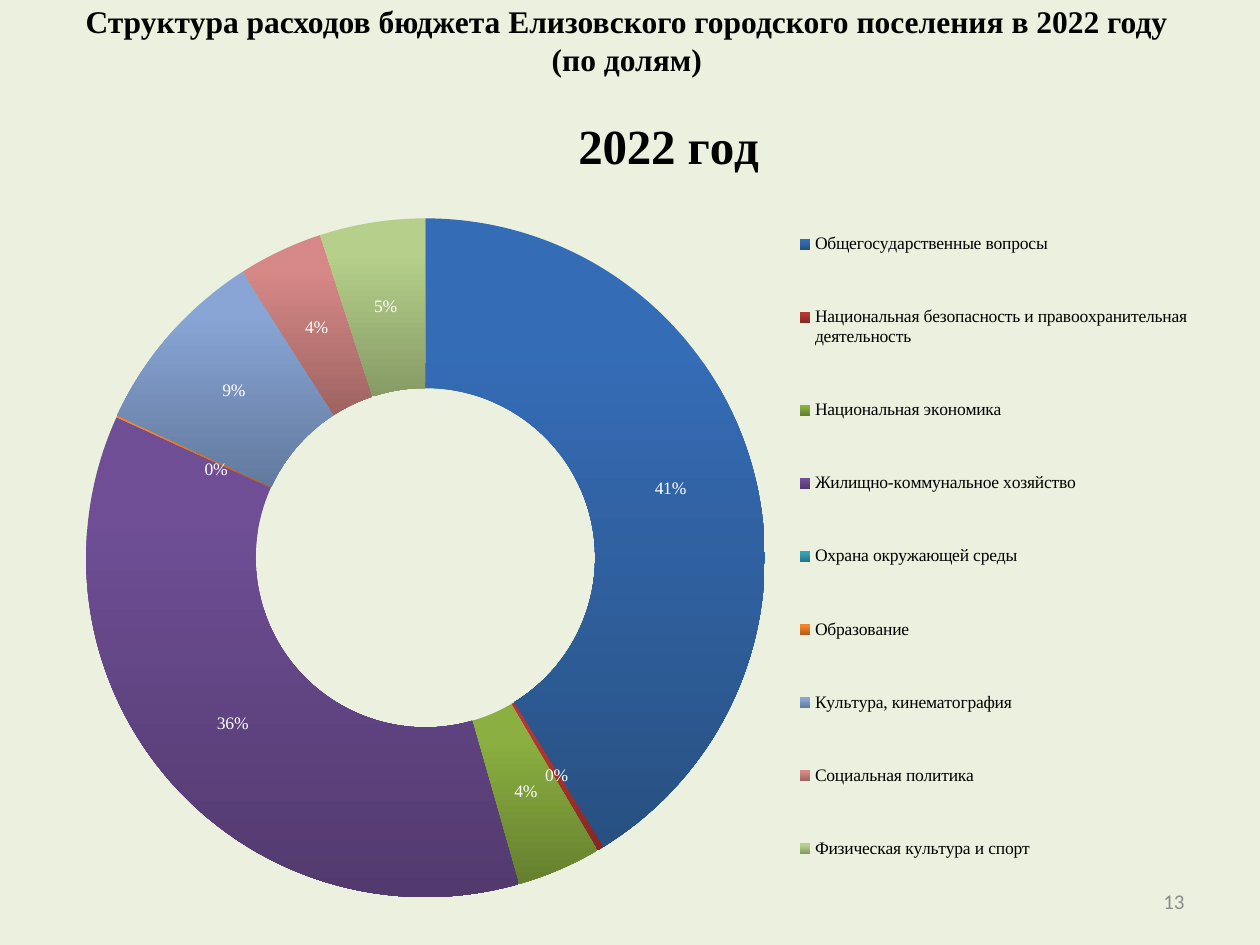
from copy import deepcopy

from lxml import etree
from pptx import Presentation
from pptx.chart.data import CategoryChartData
from pptx.dml.color import RGBColor
from pptx.enum.chart import XL_CHART_TYPE, XL_LEGEND_POSITION
from pptx.enum.text import MSO_ANCHOR, PP_ALIGN
from pptx.oxml.ns import qn
from pptx.util import Inches, Pt

TITLE = "Структура расходов бюджета Елизовского городского поселения в 2022 году\v (по долям) "
CHART_TITLE = "2022 год"
PAGE = "13"
COLORS = {"bg": "EBF1DE", "text": "000000", "label": "FFFFFF", "page": "8C8C8C"}
SERIF = "Times New Roman"
# name, share in percent, upper and lower gradient colour
EXPENSES = [
    ("Общегосударственные вопросы", 41, "356CB6", "285182"),
    ("Национальная безопасность и правоохранительная деятельность", 0.3, "B63633", "842826"),
    ("Национальная экономика", 4, "8BAF40", "65802E"),
    ("Жилищно-коммунальное хозяйство", 36, "6F4E96", "523A6E"),
    ("Охрана окружающей среды", 0, "34A2BC", "277588"),
    ("Образование", 0.1, "F58428", "B35E1A"),
    ("Культура, кинематография", 9, "88A5D5", "637A9E"),
    ("Социальная политика", 4, "D68886", "9E6462"),
    ("Физическая культура и спорт", 5, "B6D08B", "869B66"),
]
EDUCATION = 5


def style(font, **values):
    color = values.pop("color", "text")
    for name, value in values.items():
        setattr(font, name, value)
    font.color.rgb = RGBColor.from_string(COLORS[color])


def set_text(sp, text, align, **values):
    tf = sp.text_frame
    tf.word_wrap = True
    tf.vertical_anchor = MSO_ANCHOR.MIDDLE
    p = tf.paragraphs[0]
    p.text = text
    p.alignment = align
    for r in p.runs:
        style(r.font, **values)


def place(parent, index, **values):
    """Give a chart part a manual layout, in fractions of the chart area."""
    for old in parent.findall(qn("c:layout")):
        parent.remove(old)
    layout = etree.Element(qn("c:layout"))
    manual = etree.SubElement(layout, qn("c:manualLayout"))
    if parent.tag != qn("c:dLbl"):
        values = {"xMode": "edge", "yMode": "edge", **values}
    if parent.tag == qn("c:plotArea"):
        values = {"layoutTarget": "inner", **values}
    for name, value in values.items():
        etree.SubElement(manual, qn(f"c:{name}")).set("val", str(value))
    parent.insert(index, layout)


def add_doughnut(s):
    data = CategoryChartData()
    data.categories = [name for name, *_ in EXPENSES]
    data.add_series(CHART_TITLE, [share for _, share, *_ in EXPENSES])
    chart = s.shapes.add_chart(XL_CHART_TYPE.DOUGHNUT, Inches(0.16), Inches(0.75),
                               Inches(9.69), Inches(6.52), data).chart
    style(chart.font, name=SERIF, size=Pt(10))

    chart.has_title = True
    tf = chart.chart_title.text_frame
    tf.text = CHART_TITLE
    style(tf.paragraphs[0].runs[0].font, name=SERIF, size=Pt(28), bold=True)
    chart.has_legend = True
    chart.legend.position = XL_LEGEND_POSITION.RIGHT
    chart.legend.include_in_layout = False

    plot = chart.plots[0]
    plot.vary_by_categories = True
    series = plot.series[0]
    for i, (_, share, *stops) in enumerate(EXPENSES):
        point = series.points[i]
        fill = point.format.fill
        fill.gradient()
        fill.gradient_angle = 270
        for stop, color, position in zip(fill.gradient_stops, stops, (0.2, 1)):
            stop.color.rgb = RGBColor.from_string(color)
            stop.position = position
        point.format.line.fill.background()
    add_labels(series)

    area = chart._chartSpace.chart
    place(area.find(qn("c:title")), 1, x=0.45, y=0.015)
    place(area.plotArea, 0, x=0.054, y=0.15, w=0.556, h=0.828)
    place(area.find(qn("c:legend")), 1, x=0.632, y=0.105, w=0.33, h=0.89)
    plot._element.find(qn("c:holeSize")).set("val", "50")


def add_labels(series):
    labels = series.data_labels
    labels.show_percentage = True
    labels.show_value = False
    labels.number_format = "0%"
    labels.number_format_is_linked = False
    label_font = {"name": SERIF, "size": Pt(10), "color": "label"}
    style(labels.font, **label_font)

    style(series.points[EDUCATION].data_label.font, **label_font)
    shifted = labels._element.find(qn("c:dLbl"))
    shifted.find(qn("c:showVal")).set("val", "0")
    shifted.find(qn("c:showPercent")).set("val", "1")
    place(shifted, 1, x=0.018, y=0.022)
    shifted.insert(2, deepcopy(labels._element.find(qn("c:numFmt"))))
    hide_zero_labels(labels)


def hide_zero_labels(labels):
    zeros = [i for i, (_, share, *_) in enumerate(EXPENSES) if share == 0]
    for position, i in enumerate(zeros):
        label = etree.Element(qn("c:dLbl"))
        etree.SubElement(label, qn("c:idx")).set("val", str(i))
        etree.SubElement(label, qn("c:delete")).set("val", "1")
        labels._element.insert(position, label)


def main():
    prs = Presentation()
    prs.slide_width, prs.slide_height = Inches(10), Inches(7.5)
    s = prs.slides.add_slide(prs.slide_layouts[5])
    s.background.fill.solid()
    s.background.fill.fore_color.rgb = RGBColor.from_string(COLORS["bg"])

    title = s.shapes.title
    title.left, title.top, title.width, title.height = map(Inches, (0.31, 0.16, 9.33, 0.31))
    set_text(title, TITLE, PP_ALIGN.CENTER, name=SERIF, size=Pt(18), bold=True)
    page = s.shapes.add_textbox(*map(Inches, (7.17, 6.95, 2.33, 0.4)))
    set_text(page, PAGE, PP_ALIGN.RIGHT, name="Calibri", size=Pt(12), color="page")
    add_doughnut(s)
    prs.save("out.pptx")


if __name__ == "__main__":
    main()
